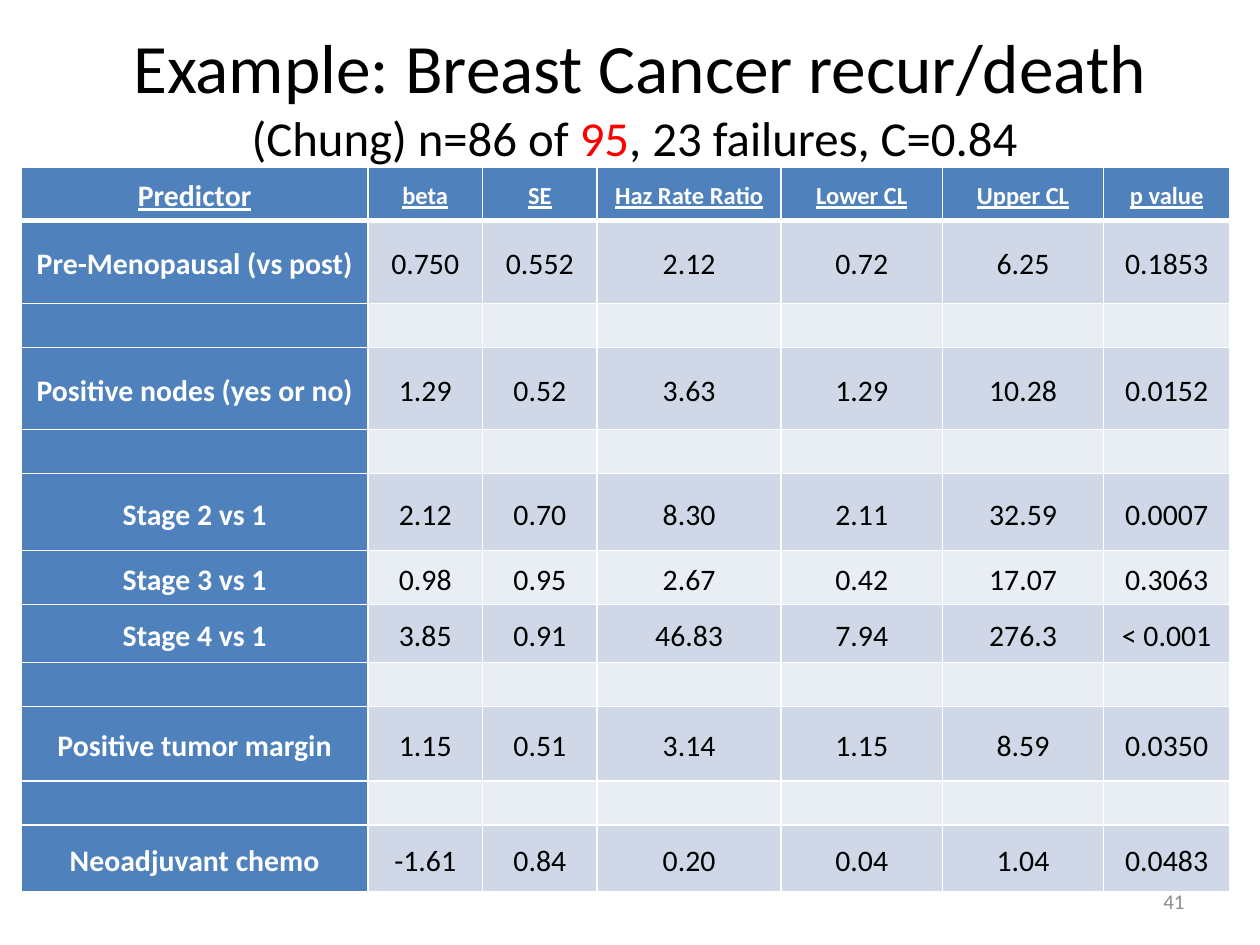
from typing import NamedTuple

from lxml.etree import SubElement
from pptx import Presentation
from pptx.dml.color import RGBColor
from pptx.enum.text import MSO_ANCHOR as Anchor, MSO_AUTO_SIZE as AutoSize, PP_ALIGN as Align
from pptx.oxml.ns import qn
from pptx.util import Pt

PX = 9144
FONT = "Calibri"
WHITE, BLACK, RED, GREY = "FFFFFF", "000000", "FF0000", "8C8C8C"
BLUE, DARK_BAND, LIGHT_BAND = "4F81BD", "D0D8E8", "E9EDF4"


class Box(NamedTuple):
    left: int
    top: int
    width: int
    height: int


class Span(NamedTuple):
    text: str
    size: float
    color: str = BLACK
    bold: bool = False
    underline: bool = False


class Row(NamedTuple):
    height: int
    values: tuple = ("",) * 7


TITLE = [
    [Span("Example: Breast Cancer recur/death", 39.6)],
    [
        Span("(Chung) n=86 of ", 27.9),
        Span("95", 27.9, RED),
        Span(", 23 failures, C=0.84 ", 27.9),
    ],
]
COLUMNS = (275, 91, 91, 146, 128, 128, 100)
ROWS = [
    Row(42, ("Predictor", "beta", "SE", "Haz Rate Ratio", "Lower CL", "Upper CL", "p value")),
    Row(66, ("Pre-Menopausal (vs post)", "0.750", "0.552", "2.12", "0.72", "6.25", "0.1853")),
    Row(35),
    Row(65, ("Positive nodes (yes or no)", "1.29", "0.52", "3.63", "1.29", "10.28", "0.0152")),
    Row(35),
    Row(61, ("Stage 2 vs 1", "2.12", "0.70", "8.30", "2.11", "32.59", "0.0007")),
    Row(43, ("Stage 3 vs 1", "0.98", "0.95", "2.67", "0.42", "17.07", "0.3063")),
    Row(46, ("Stage 4 vs 1", "3.85", "0.91", "46.83", "7.94", "276.3", "< 0.001")),
    Row(35),
    Row(59, ("Positive tumor margin", "1.15", "0.51", "3.14", "1.15", "8.59", "0.0350")),
    Row(35),
    Row(53, ("Neoadjuvant chemo", "-1.61", "0.84", "0.20", "0.04", "1.04", "0.0483")),
]


def rgb(color: str) -> RGBColor:
    """Turn a hex string into a colour."""
    return RGBColor.from_string(color)


def emu(box: Box) -> list[int]:
    """Turn a box in px into EMU lengths."""
    return [length * PX for length in box]


def format_run(run, span: Span) -> None:
    """Give a run the look of its span."""
    font = run.font
    font.name, font.size = FONT, Pt(span.size)
    font.bold, font.underline = span.bold, span.underline
    font.color.rgb = rgb(span.color)


def draw_title(page, box: Box) -> None:
    """Place the title and fill its two lines."""
    title = page.shapes.title
    title.left, title.top, title.width, title.height = emu(box)
    frame = title.text_frame
    frame.auto_size, frame.vertical_anchor = AutoSize.NONE, Anchor.MIDDLE
    para = frame.paragraphs[0]
    para.alignment = Align.CENTER
    for index, line in enumerate(TITLE):
        if index:
            para.add_line_break()
        for span in line:
            run = para.add_run()
            run.text = span.text
            format_run(run, span)


def draw_borders(cell, top: int, bottom: int) -> None:
    """Draw white borders around a cell, with widths in points."""
    properties = cell._tc.get_or_add_tcPr()
    for tag, width in (("a:lnL", 1), ("a:lnR", 1), ("a:lnT", top), ("a:lnB", bottom)):
        line = SubElement(properties, qn(tag), w=str(Pt(width)))
        fill = SubElement(line, qn("a:solidFill"))
        SubElement(fill, qn("a:srgbClr"), val=WHITE)


def draw_cell(cell, text: str, row: int, column: int) -> None:
    """Fill and format one cell by its place in the table."""
    header, label = row == 0, column == 0
    draw_borders(cell, 3 if row == 1 else 1, 3 if header else 1)
    cell.fill.solid()
    band = DARK_BAND if row % 2 else LIGHT_BAND
    cell.fill.fore_color.rgb = rgb(BLUE if header or label else band)
    cell.margin_left = cell.margin_right = 7 * PX
    cell.margin_top = cell.margin_bottom = 0
    cell.vertical_anchor = Anchor.MIDDLE
    if not text:
        return
    cell.text_frame.text = text
    para = cell.text_frame.paragraphs[0]
    para.alignment, para.line_spacing = Align.CENTER, 1.15
    strong = header or label
    size = 14 if header and not label else 17
    format_run(para.runs[0], Span(text, size, WHITE if strong else BLACK, strong, header))


def draw_table(page, left: int, top: int) -> None:
    """Draw the table of hazard rate ratios."""
    box = Box(left, top, sum(COLUMNS), sum(row.height for row in ROWS))
    table = page.shapes.add_table(len(ROWS), len(COLUMNS), *emu(box)).table
    for column, width in zip(table.columns, COLUMNS):
        column.width = width * PX
    for row_index, row in enumerate(ROWS):
        table.rows[row_index].height = row.height * PX
        for column_index, text in enumerate(row.values):
            draw_cell(table.cell(row_index, column_index), text, row_index, column_index)


def draw_page_number(page, box: Box, number: str) -> None:
    """Write the page number at the lower right."""
    frame = page.shapes.add_textbox(*emu(box)).text_frame
    frame.word_wrap, frame.vertical_anchor = True, Anchor.MIDDLE
    frame.text = number
    para = frame.paragraphs[0]
    para.alignment = Align.RIGHT
    format_run(para.runs[0], Span(number, 12, GREY))


def main() -> None:
    """Build the slide and save it."""
    deck = Presentation()
    deck.slide_width, deck.slide_height = 1000 * PX, 750 * PX
    page = deck.slides.add_slide(deck.slide_layouts.get_by_name("Title Only"))
    draw_title(page, Box(58, 17, 900, 117))
    draw_table(page, 17, 133)
    draw_page_number(page, Box(717, 695, 233, 40), "41")
    deck.save("out.pptx")


if __name__ == "__main__":
    main()
